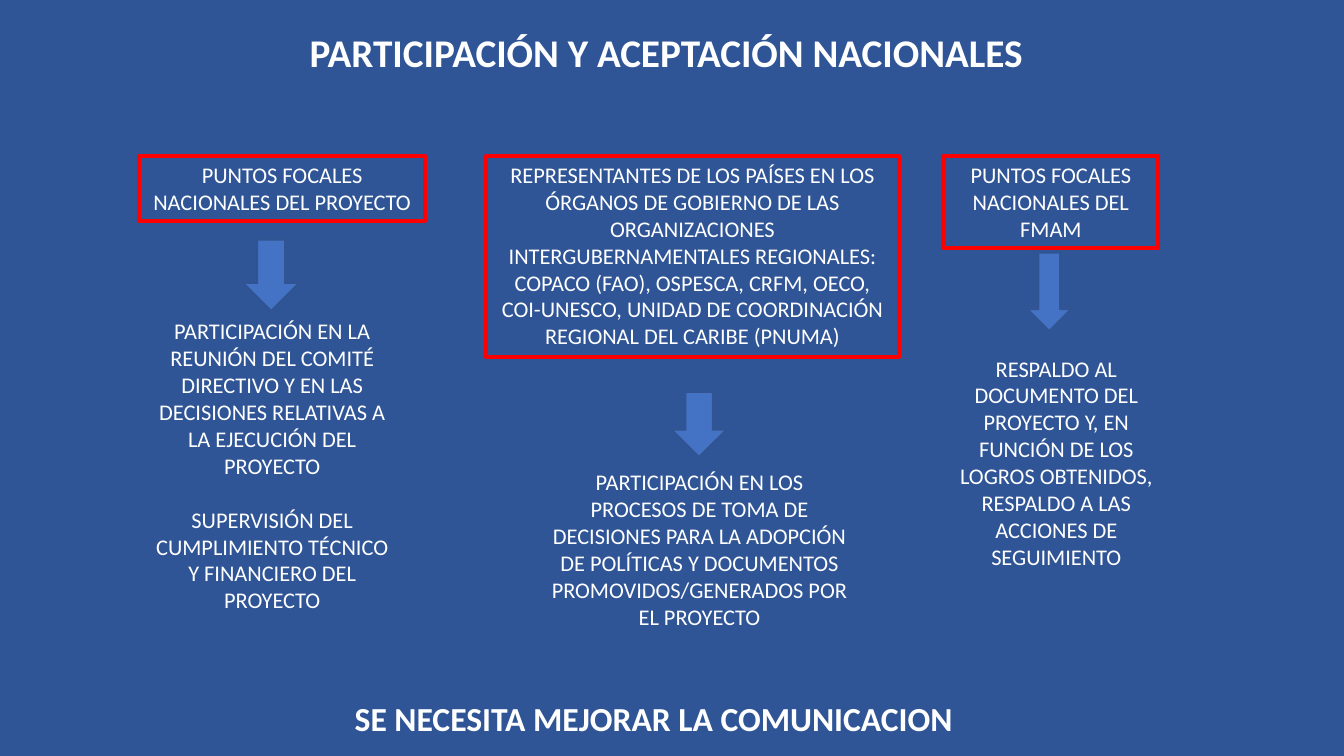
from dataclasses import dataclass
from typing import Any, NamedTuple

from pptx import Presentation
from pptx import util as u
from pptx.dml.color import RGBColor
from pptx.enum import shapes, text


@dataclass(frozen=True)
class Theme:
    font: str = "Calibri"
    back: str = "2F5597"
    ink: str = "FFFFFF"
    frame: str = "FF0000"
    arrow: str = "4472C4"
    edge: str = "325491"
    head: int = 28
    foot: int = 24
    body: int = 16
    gap: float = 19.5


class Area(NamedTuple):
    """Left, top, width and height as percent of the slide."""
    x: float
    y: float
    w: float
    h: float


@dataclass(frozen=True)
class Column:
    group: str
    box: Area
    arrow: Area
    role: Area
    duties: tuple[str, ...]


THEME = Theme()
WIDE, HIGH = u.Inches(13.33), u.Inches(7.5)
TOP = 20.67

TITLE = Area(22.28, 3.07, 57.75, 7.6)
CLOSE = Area(25.65, 91.6, 59.4, 6.67)
COLUMNS = (
    Column("PUNTOS FOCALES NACIONALES DEL PROYECTO",
           Area(10.35, TOP, 21.3, 8.53), Area(18.15, 31.73, 4.05, 9.33),
           Area(10.43, 41.33, 19.65, 41.73),
           ("PARTICIPACIÓN EN LA REUNIÓN DEL COMITÉ DIRECTIVO Y EN LAS "
            "DECISIONES RELATIVAS A LA EJECUCIÓN DEL PROYECTO",
            "SUPERVISIÓN DEL CUMPLIMIENTO TÉCNICO Y FINANCIERO DEL PROYECTO")),
    Column("REPRESENTANTES DE LOS PAÍSES EN LOS ÓRGANOS DE GOBIERNO DE LAS "
           "ORGANIZACIONES INTERGUBERNAMENTALES REGIONALES: COPACO (FAO), "
           "OSPESCA, CRFM, OECO, COI-UNESCO, UNIDAD DE COORDINACIÓN "
           "REGIONAL DEL CARIBE (PNUMA)",
           Area(36.15, TOP, 30.75, 26.53), Area(50.03, 51.87, 3.98, 8.53),
           Area(40.05, 61.33, 24, 22.93),
           ("PARTICIPACIÓN EN LOS PROCESOS DE TOMA DE DECISIONES PARA LA "
            "ADOPCIÓN DE POLÍTICAS Y DOCUMENTOS PROMOVIDOS/GENERADOS POR "
            "EL PROYECTO",)),
    Column("PUNTOS FOCALES NACIONALES DEL FMAM",
           Area(70.2, TOP, 15.98, 12.13), Area(76.5, 33.47, 3.15, 10.27),
           Area(70.2, 46.27, 16.8, 37.2),
           ("RESPALDO AL DOCUMENTO DEL PROYECTO Y, EN FUNCIÓN DE LOS LOGROS "
            "OBTENIDOS, RESPALDO A LAS ACCIONES DE SEGUIMIENTO",)),
)


def style(item: Any, form: dict[str, Any]) -> None:
    for name, value in form.items():
        setattr(item, name, value)


def place(area: Area) -> tuple[int, int, int, int]:
    return (int(WIDE * area.x / 100), int(HIGH * area.y / 100),
            int(WIDE * area.w / 100), int(HIGH * area.h / 100))


def paint(fill: Any, color: str) -> None:
    fill.solid()
    fill.fore_color.rgb = RGBColor.from_string(color)


def write(shape: Any, lines: tuple[str, ...], size: int,
          bold: bool = False, center: bool = True) -> None:
    frame = shape.text_frame
    style(frame, {"word_wrap": True, "auto_size": text.MSO_AUTO_SIZE.NONE,
                  "vertical_anchor": text.MSO_ANCHOR.TOP})
    align = text.PP_ALIGN.CENTER if center else text.PP_ALIGN.LEFT
    for i, line in enumerate(lines):
        para = frame.add_paragraph() if i else frame.paragraphs[0]
        style(para, {"alignment": align,
                     "space_before": u.Pt(THEME.gap if i else 0)})
        run = para.add_run()
        run.text = line
        style(run.font, {"name": THEME.font, "size": u.Pt(size), "bold": bold})
        run.font.color.rgb = RGBColor.from_string(THEME.ink)


def draw(slide: Any, kind: Any, area: Area, edge: str, width: int) -> Any:
    shape = slide.shapes.add_shape(kind, *place(area))
    shape.shadow.inherit = False
    shape.fill.background()
    paint(shape.line.fill, edge)
    shape.line.width = u.Pt(width)
    return shape


def add_column(slide: Any, col: Column) -> None:
    box = draw(slide, shapes.MSO_SHAPE.RECTANGLE, col.box, THEME.frame, 3)
    write(box, (col.group,), THEME.body)
    arrow = draw(slide, shapes.MSO_SHAPE.DOWN_ARROW, col.arrow, THEME.edge, 1)
    paint(arrow.fill, THEME.arrow)
    role = slide.shapes.add_textbox(*place(col.role))
    write(role, col.duties, THEME.body)


def main() -> None:
    deck = Presentation()
    style(deck, {"slide_width": WIDE, "slide_height": HIGH})
    slide = deck.slides.add_slide(deck.slide_layouts[5])
    paint(slide.background.fill, THEME.back)

    # Title
    title = slide.shapes.title
    style(title, dict(zip(("left", "top", "width", "height"), place(TITLE))))
    write(title, ("PARTICIPACIÓN Y ACEPTACIÓN NACIONALES",), THEME.head,
          bold=True, center=False)

    # Groups and what they do
    for col in COLUMNS:
        add_column(slide, col)

    # Closing line
    close = slide.shapes.add_textbox(*place(CLOSE))
    write(close, ("SE NECESITA MEJORAR LA COMUNICACION",), THEME.foot,
          bold=True, center=False)

    deck.save("out.pptx")


if __name__ == "__main__":
    main()
